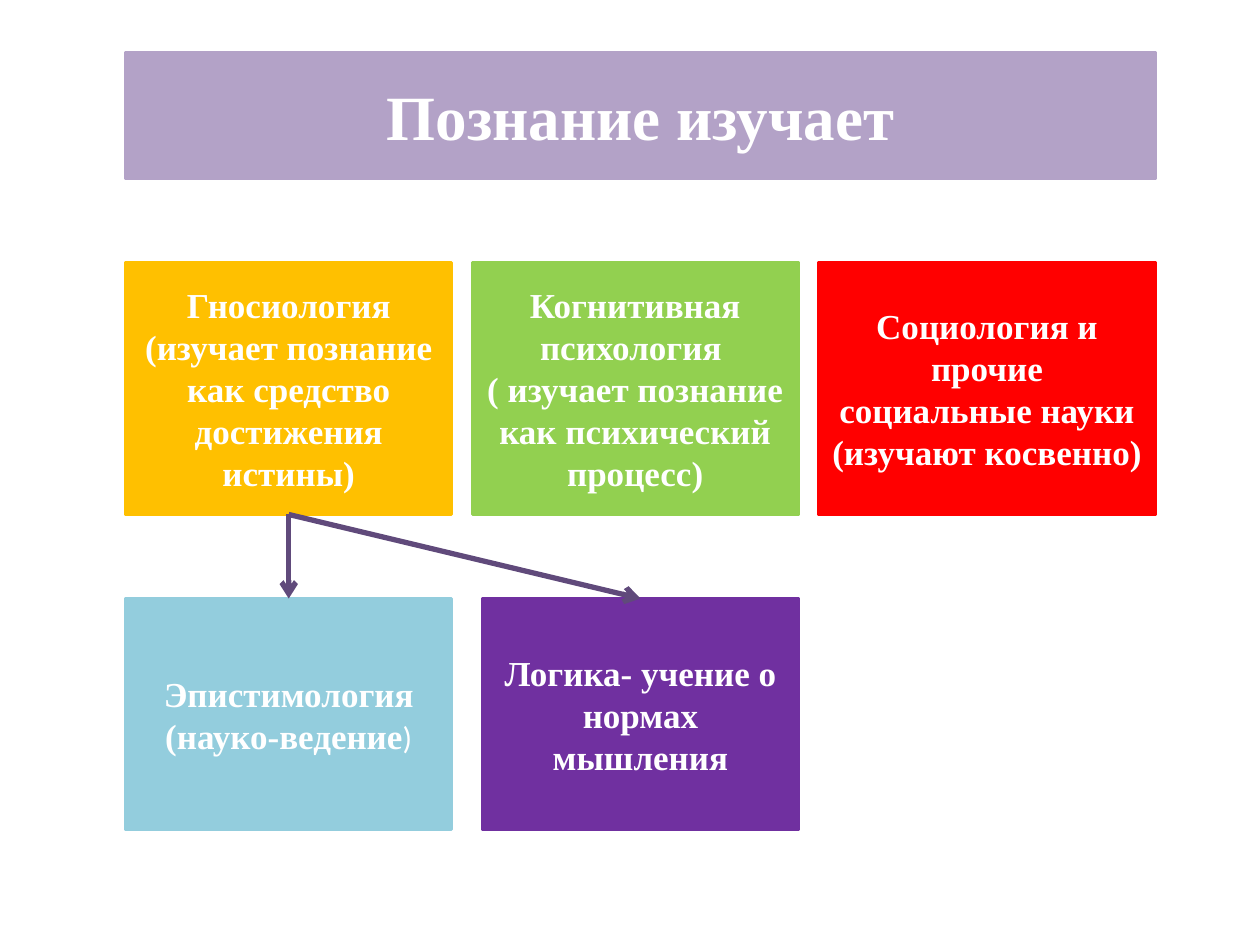
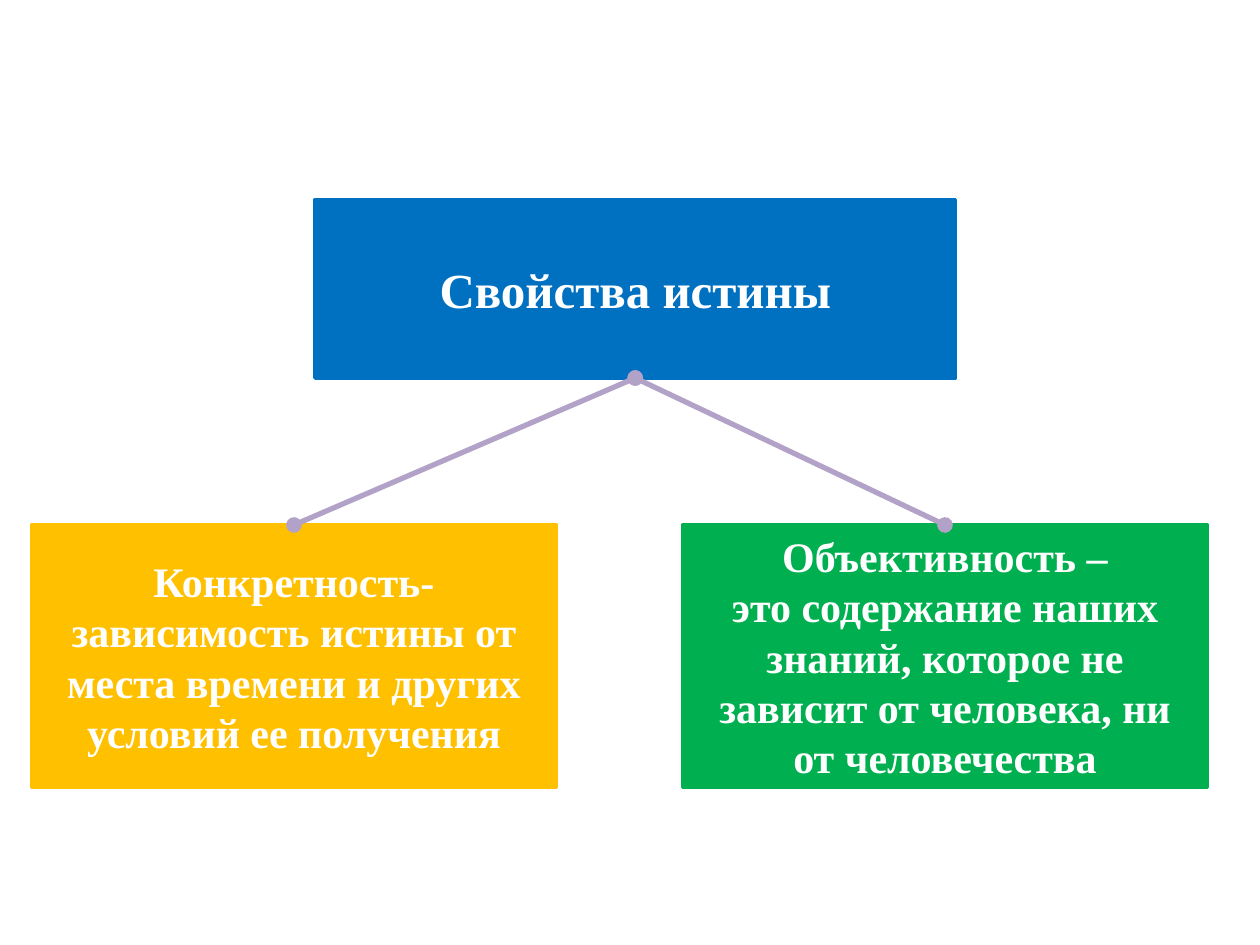
from lxml import etree
from pptx import Presentation
from pptx.dml.color import RGBColor
from pptx.enum.shapes import MSO_CONNECTOR, MSO_SHAPE
from pptx.enum.text import MSO_ANCHOR, MSO_AUTO_SIZE, PP_ALIGN
from pptx.oxml.ns import qn
from pptx.util import Inches, Pt

COLORS = {
    "white": "FFFFFF", "lilac": "B3A2C7", "amber": "FFC000", "lime": "92D050",
    "red": "FF0000", "violet": "7030A0", "sky": "93CDDD", "plum": "604A7B",
    "blue": "0070C0", "green": "00B050",
}
SERIF, SANS = "Times New Roman", "Calibri"
UNIT = Inches(10) // 120  # the slide is a grid of 120 columns by 90 rows
TITLE_ONLY = 5
TOP, BOTTOM = 0, 2  # connection sites of a rectangle


def rgb(name):
    return RGBColor.from_string(COLORS[name])


def add_run(p, text, size, font=SERIF, bold=True):
    r = p.add_run()
    r.text = text
    r.font.name = font
    r.font.size = Pt(size)
    r.font.bold = bold
    r.font.color.rgb = rgb("white")


def style_box(sp, cell, color, paragraphs, size):
    """Place sp on the grid cell (column, row, columns, rows), paint it and write the text."""
    sp.left, sp.top, sp.width, sp.height = (n * UNIT for n in cell)
    sp.fill.solid()
    sp.fill.fore_color.rgb = rgb(color)
    sp.line.color.rgb = rgb(color)
    sp.line.width = Pt(2)
    tf = sp.text_frame
    tf.word_wrap = True
    tf.auto_size = MSO_AUTO_SIZE.NONE
    tf.vertical_anchor = MSO_ANCHOR.MIDDLE
    for i, text in enumerate(paragraphs):
        p = tf.add_paragraph() if i else tf.paragraphs[0]
        p.alignment = PP_ALIGN.CENTER
        add_run(p, text, size)
    return sp


def add_title(s, cell, color, text, size):
    return style_box(s.shapes.title, cell, color, [text], size)


def add_box(s, cell, color, paragraphs, size):
    sp = s.shapes.add_shape(MSO_SHAPE.RECTANGLE, 0, 0, UNIT, UNIT)
    sp.shadow.inherit = False
    return style_box(sp, cell, color, paragraphs, size)


def add_branch(s, parent, child, color, **ends):
    """Join parent's bottom to child's top; ends maps headEnd and tailEnd to a type."""
    line = s.shapes.add_connector(MSO_CONNECTOR.STRAIGHT, 0, 0, 0, 0)
    line.begin_connect(parent, BOTTOM)
    line.end_connect(child, TOP)
    line.line.color.rgb = rgb(color)
    line.line.width = Pt(3)
    ln = line.line._get_or_add_ln()
    for end, kind in ends.items():
        etree.SubElement(ln, qn(f"a:{end}"), type=kind)
    etree.SubElement(line._element.spPr, qn("a:effectLst"))


def build_sciences(s):
    add_title(s, (12, 5, 98, 12), "lilac", "Познание изучает", 36)
    sciences = [
        (12, 31, "amber", ["Гносиология (изучает познание как средство достижения истины)"]),
        (45, 31, "lime", ["Когнитивная психология ",
                          "( изучает познание как психический процесс)"]),
        (78, 32, "red", ["Социология и прочие социальные науки (изучают косвенно)"]),
    ]
    branches = [
        (12, 31, "sky", ["Эпистимология (науко-ведение"]),
        (46, 30, "violet", ["Логика- учение о нормах мышления"]),
    ]
    gnoseology, *_ = [add_box(s, (col, 25, cols, 24), color, text, 20)
                      for col, cols, color, text in sciences]
    epistemology, logic = [add_box(s, (col, 57, cols, 22), color, text, 20)
                           for col, cols, color, text in branches]
    add_run(epistemology.text_frame.paragraphs[0], ")", 18, SANS, False)
    for child in (epistemology, logic):
        add_branch(s, gnoseology, child, "plum", tailEnd="arrow")


def build_truth(s):
    truth = add_title(s, (30, 19, 61, 17), "blue", "Свойства истины", 28)
    properties = [
        (3, "amber", ["Конкретность- зависимость истины от места времени "
                      "и других условий ее получения"]),
        (65, "green", ["Объективность –",
                       "это содержание наших знаний, которое не зависит "
                       "от человека, ни от человечества"]),
    ]
    boxes = [add_box(s, (col, 50, 50, 25), color, text, 24)
             for col, color, text in properties]
    for child in boxes:
        add_branch(s, truth, child, "lilac", headEnd="oval", tailEnd="oval")


def main():
    prs = Presentation()
    prs.slide_width, prs.slide_height = 120 * UNIT, 90 * UNIT
    for build in (build_sciences, build_truth):
        build(prs.slides.add_slide(prs.slide_layouts[TITLE_ONLY]))
    prs.save("out.pptx")


if __name__ == "__main__":
    main()
